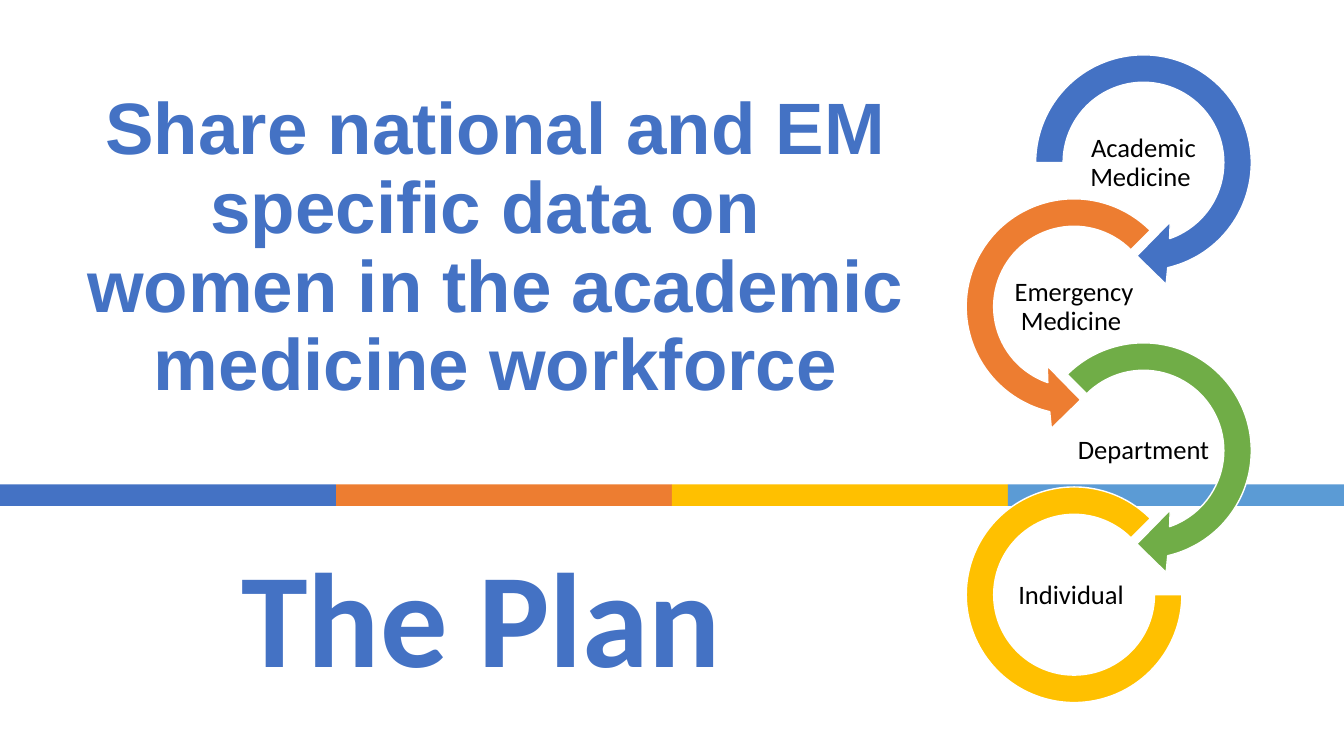
from math import cos, radians, sin

from lxml import etree
from pptx import Presentation
from pptx.dml.color import RGBColor
from pptx.enum.shapes import MSO_SHAPE
from pptx.enum.text import MSO_ANCHOR, MSO_AUTO_SIZE, PP_ALIGN
from pptx.oxml.ns import qn
from pptx.util import Pt

BLUE = RGBColor(0x44, 0x72, 0xC4)
ORANGE = RGBColor(0xED, 0x7D, 0x31)
YELLOW = RGBColor(0xFF, 0xC0, 0x00)
LIGHT_BLUE = RGBColor(0x5B, 0x9B, 0xD5)
GREEN = RGBColor(0x70, 0xAD, 0x47)
WHITE = RGBColor(0xFF, 0xFF, 0xFF)
BLACK = RGBColor(0x00, 0x00, 0x00)

RECTANGLE = MSO_SHAPE.RECTANGLE
BLOCK_ARC = MSO_SHAPE.BLOCK_ARC
CENTER = PP_ALIGN.CENTER
TOP, MIDDLE, BOTTOM = MSO_ANCHOR.TOP, MSO_ANCHOR.MIDDLE, MSO_ANCHOR.BOTTOM
NO_AUTOFIT = MSO_AUTO_SIZE.NONE

SLIDE_WIDTH, SLIDE_HEIGHT = 960, 540
OUTER_RADIUS, INNER_RADIUS = 77, 57.4
RING_BOX = 179.2
ARROW_HEAD = [(16.2, 87), (-4.7, 66.6), (19.1, 42.3)]
OUTER_END, INNER_END = 437, 431
LABEL_WIDTH, LABEL_HEIGHT, LABEL_DROP = 100, 50, 0.5

STEPS = [
    ("Academic Medicine ", BLUE, 180),
    ("Emergency Medicine ", ORANGE, 225),
    ("Department ", GREEN, 225),
    ("Individual ", YELLOW, None),
]


def write_text(shape, text, font_name, size, color, anchor, bold=False):
    frame = shape.text_frame
    frame.word_wrap = True
    frame.auto_size = NO_AUTOFIT
    frame.vertical_anchor = anchor
    frame.text = text
    paragraph = frame.paragraphs[0]
    paragraph.alignment = CENTER
    paragraph.line_spacing = 0.9
    for run in paragraph.runs:
        run.font.name = font_name
        run.font.size = Pt(size)
        run.font.bold = bold
        run.font.color.rgb = color


def place_title(slide, left, top, width, height):
    title = slide.shapes.title
    title.left, title.top = Pt(left), Pt(top)
    title.width, title.height = Pt(width), Pt(height)
    write_text(
        title,
        "Share national and EM specific data on \vwomen in the academic medicine workforce",
        "Arial", 52, BLUE, BOTTOM, bold=True,
    )


def add_color_band(slide, left, top, width, height):
    colors = [BLUE, ORANGE, YELLOW, LIGHT_BLUE]
    segment = width / len(colors)
    for index, color in enumerate(colors):
        bar = slide.shapes.add_shape(
            RECTANGLE, Pt(left + index * segment), Pt(top), Pt(segment), Pt(height)
        )
        bar.shadow.inherit = False
        bar.fill.solid()
        bar.fill.fore_color.rgb = color
        bar.line.fill.background()


def add_plan_heading(slide, left, top, width, height):
    heading = slide.shapes.add_textbox(Pt(left), Pt(top), Pt(width), Pt(height))
    write_text(heading, " The Plan", "Calibri", 96, BLUE, TOP, bold=True)


def ring_point(radius, angle):
    return radius * cos(radians(angle)), radius * sin(radians(angle))


def replace_with_arc(segment, radius, start, end, mirrored):
    sweep = end - start
    if mirrored:
        start, sweep = 180 - start, -sweep
    arc = etree.Element(qn("a:arcTo"))
    arc.set("wR", str(Pt(radius)))
    arc.set("hR", str(Pt(radius)))
    arc.set("stAng", str(start % 360 * 60000))
    arc.set("swAng", str(sweep * 60000))
    segment.getparent().replace(segment, arc)


def add_arrow_ring(slide, center_x, center_y, start, mirrored):
    half = RING_BOX / 2
    corners = [
        (-half, -half),
        (half, half),
        ring_point(OUTER_RADIUS, start),
        ring_point(OUTER_RADIUS, OUTER_END),
        *ARROW_HEAD,
        ring_point(INNER_RADIUS, INNER_END),
        ring_point(INNER_RADIUS, start),
    ]
    side = -1 if mirrored else 1
    points = [(Pt(center_x + side * x), Pt(center_y + y)) for x, y in corners]
    builder = slide.shapes.build_freeform(*points[0])
    builder.move_to(*points[1])
    builder.move_to(*points[2])
    builder.add_line_segments(points[3:], close=True)
    ring = builder.convert_to_shape()
    outline = next(ring._element.iter(qn("a:path")))
    for box_corner in outline.findall(qn("a:moveTo"))[:2]:
        outline.remove(box_corner)
    segments = outline.findall(qn("a:lnTo"))
    replace_with_arc(segments[0], OUTER_RADIUS, start, OUTER_END, mirrored)
    replace_with_arc(segments[-1], INNER_RADIUS, INNER_END, start, mirrored)
    return ring


def add_open_ring(slide, center_x, center_y):
    diameter = Pt(2 * OUTER_RADIUS)
    ring = slide.shapes.add_shape(
        BLOCK_ARC, Pt(center_x - OUTER_RADIUS), Pt(center_y - OUTER_RADIUS), diameter, diameter
    )
    ring.adjustments[0] = 0
    ring.adjustments[1] = 189
    ring.adjustments[2] = 0.127
    return ring


def add_step_label(slide, text, center_x, center_y):
    label = slide.shapes.add_textbox(
        Pt(center_x - LABEL_WIDTH / 2), Pt(center_y - LABEL_HEIGHT / 2 + LABEL_DROP),
        Pt(LABEL_WIDTH), Pt(LABEL_HEIGHT),
    )
    frame = label.text_frame
    frame.margin_left = frame.margin_right = Pt(1)
    frame.margin_top = frame.margin_bottom = Pt(1)
    write_text(label, text, "Calibri", 19, BLACK, MIDDLE)


def add_ring_chain(slide, left, top, width, height):
    pitch = (height - 2 * OUTER_RADIUS) / (len(STEPS) - 1)
    for index, (text, color, start) in enumerate(STEPS):
        on_left = index % 2 == 1
        center_x = left + OUTER_RADIUS if on_left else left + width - OUTER_RADIUS
        center_y = top + OUTER_RADIUS + index * pitch
        if start is None:
            ring = add_open_ring(slide, center_x, center_y)
        else:
            ring = add_arrow_ring(slide, center_x, center_y, start, on_left)
        ring.shadow.inherit = False
        ring.fill.solid()
        ring.fill.fore_color.rgb = color
        ring.line.color.rgb = WHITE
        ring.line.width = Pt(1)
        add_step_label(slide, text, center_x, center_y)


def main():
    presentation = Presentation()
    presentation.slide_width = Pt(SLIDE_WIDTH)
    presentation.slide_height = Pt(SLIDE_HEIGHT)
    slide = presentation.slides.add_slide(presentation.slide_layouts.get_by_name("Title Only"))
    add_color_band(slide, 0, 346, SLIDE_WIDTH, 15.4)
    place_title(slide, 30, 36, 648, 258)
    add_plan_heading(slide, 48, 390, 570, 118)
    add_ring_chain(slide, 690.2, 39.2, 203.6, 462.6)
    presentation.save("out.pptx")


if __name__ == "__main__":
    main()
